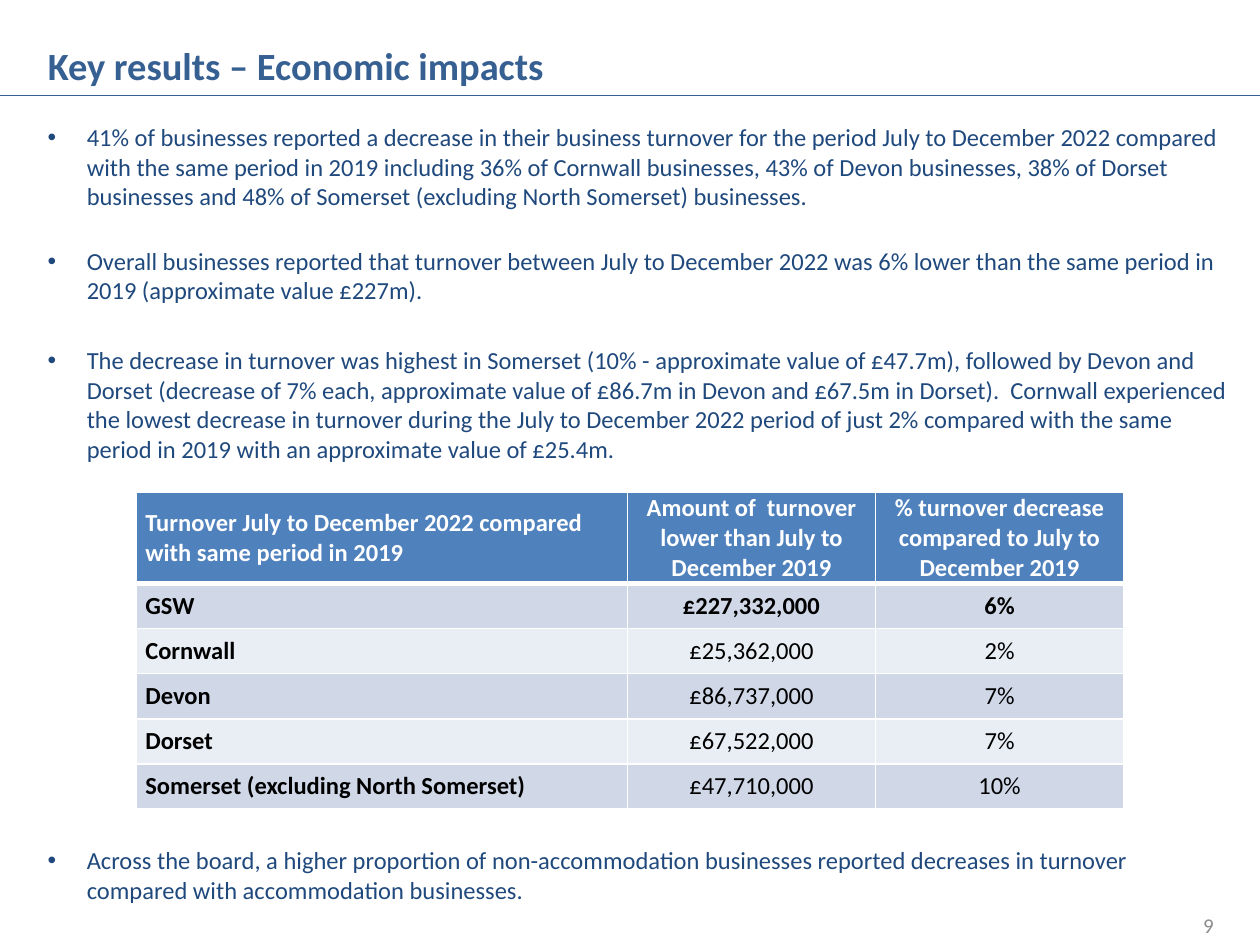
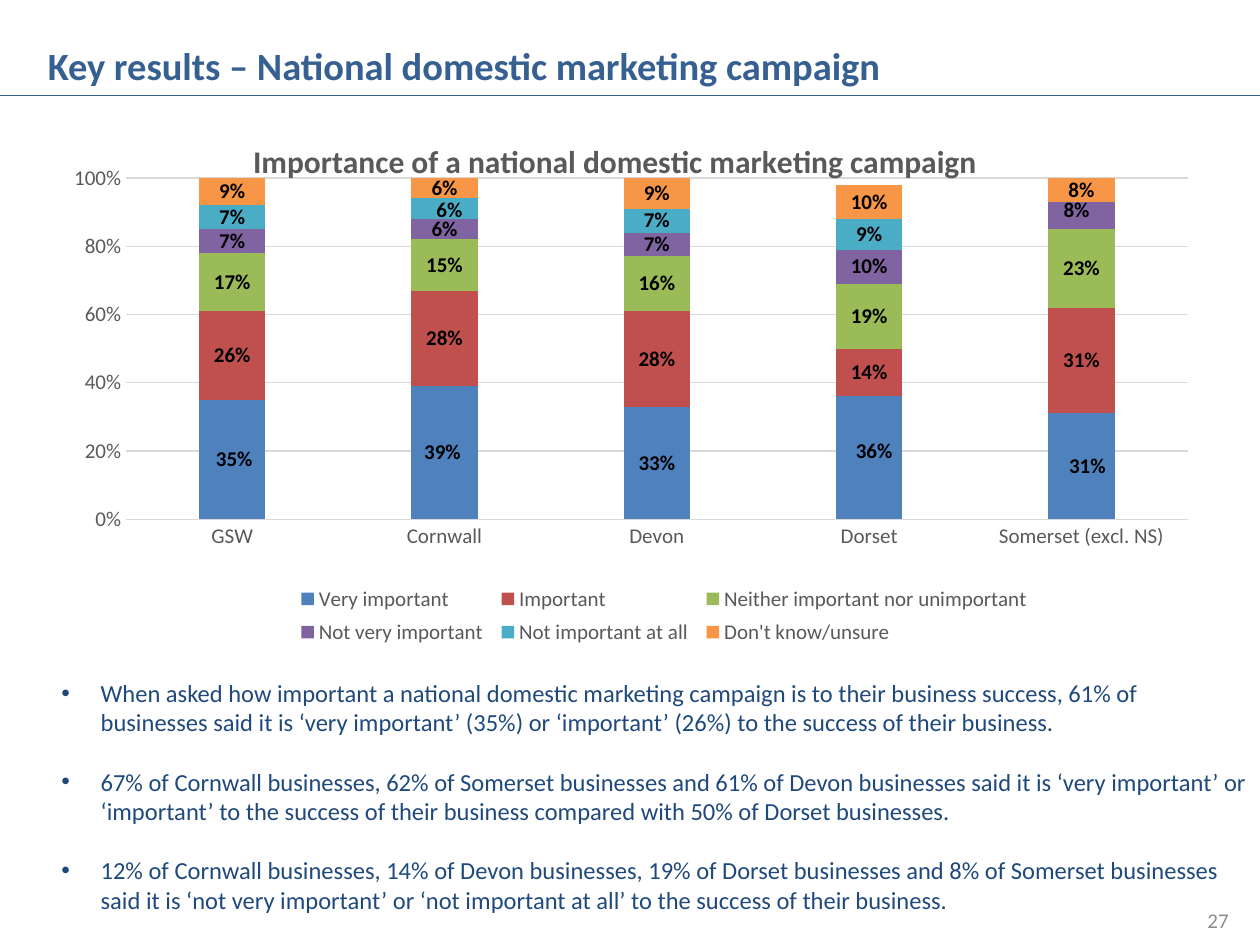
"""Build two slides of key tourism business results: a turnover table and a campaign chart."""

from lxml.etree import SubElement
from pptx import Presentation
from pptx.chart.data import CategoryChartData
from pptx.dml.color import RGBColor
from pptx.enum.chart import XL_CHART_TYPE as ChartType, XL_LABEL_POSITION as LabelPosition
from pptx.enum.chart import XL_LEGEND_POSITION as LegendPosition, XL_TICK_MARK as TickMark
from pptx.enum.shapes import MSO_CONNECTOR as Connector
from pptx.enum.text import MSO_ANCHOR as Anchor, MSO_AUTO_SIZE as AutoSize, PP_ALIGN as Align
from pptx.oxml import parse_xml
from pptx.oxml.ns import nsdecls, qn
from pptx.util import Cm, Pt

FONT = "Calibri"
TITLE_BLUE = RGBColor(0x37, 0x60, 0x92)
TEXT_BLUE = RGBColor(0x1F, 0x49, 0x7D)
HEADER_BLUE = RGBColor(0x4F, 0x81, 0xBD)
BAND_DARK = RGBColor(0xD0, 0xD8, 0xE8)
BAND_LIGHT = RGBColor(0xE9, 0xED, 0xF4)
NUMBER_GREY = RGBColor(0x8C, 0x8C, 0x8C)
CHART_GREY = RGBColor(0x59, 0x59, 0x59)
GRID_GREY = RGBColor(0xD9, 0xD9, 0xD9)
BLACK = RGBColor(0, 0, 0)
WHITE = RGBColor(0xFF, 0xFF, 0xFF)
RED = RGBColor(0xC0, 0x50, 0x4D)
GREEN = RGBColor(0x9B, 0xBB, 0x59)
PURPLE = RGBColor(0x80, 0x64, 0xA2)
TEAL = RGBColor(0x4B, 0xAC, 0xC6)
ORANGE = RGBColor(0xF7, 0x96, 0x46)


def write_text(frame, text, size=14, color=TEXT_BLUE, bold=False, align=Align.LEFT,
               line_spacing=None, space_after=0, bullet=False):
    """Append one formatted paragraph, reusing the empty first one."""
    paragraph = frame.paragraphs[0] if not frame.text else frame.add_paragraph()
    paragraph.alignment = align
    paragraph.line_spacing = line_spacing
    paragraph.space_before = Pt(0)
    paragraph.space_after = Pt(space_after)
    run = paragraph.add_run()
    run.text = text
    run.font.name = FONT
    run.font.size = Pt(size)
    run.font.bold = bold
    run.font.color.rgb = color
    if bullet:
        properties = paragraph._p.get_or_add_pPr()
        properties.set("marL", str(Cm(0.79)))
        properties.set("indent", str(-Cm(0.79)))
        SubElement(properties, qn("a:buFont"), typeface="Arial")
        SubElement(properties, qn("a:buChar"), char="•")


def place_part(part, index, inner=False, **fractions):
    """Give a chart part a manual layout as its child at the index."""
    for old_layout in part.findall(qn("c:layout")):
        part.remove(old_layout)
    layout = parse_xml(f"<c:layout {nsdecls('c')}><c:manualLayout/></c:layout>")
    manual = layout[0]
    if inner:
        SubElement(manual, qn("c:layoutTarget"), val="inner")
    if part.tag != qn("c:dLbl"):
        SubElement(manual, qn("c:xMode"), val="edge")
        SubElement(manual, qn("c:yMode"), val="edge")
    for name, value in fractions.items():
        SubElement(manual, qn(f"c:{name}"), val=f"{value:.4f}")
    part.insert(index, layout)


presentation = Presentation()
presentation.slide_width = Cm(25.4)
presentation.slide_height = Cm(19.05)

SLIDES = [
    {
        "title": "Key results – Economic impacts", "title_width": 10.64,
        "number": "9", "number_at": (18.8, 18.14),
        "body_at": (0.71, 2.34, 24.36, 16.71),
        "bullets": [
            ("41% of businesses reported a decrease in their business turnover for the period July to "
             "December 2022 compared with the same period in 2019 including 36% of Cornwall businesses, "
             "43% of Devon businesses, 38% of Dorset businesses and 48% of Somerset (excluding North "
             "Somerset) businesses.", 20.2),
            ("Overall businesses reported that turnover between July to December 2022 was 6% lower than "
             "the same period in 2019 (approximate value £227m).", 23.3),
            ("The decrease in turnover was highest in Somerset (10% - approximate value of £47.7m), "
             "followed by Devon and Dorset (decrease of 7% each, approximate value of £86.7m in Devon "
             "and £67.5m in Dorset).  Cornwall experienced the lowest decrease in turnover during the "
             "July to December 2022 period of just 2% compared with the same period in 2019 with an "
             "approximate value of £25.4m.", 218.5),
            ("Across the board, a higher proportion of non-accommodation businesses reported decreases "
             "in turnover compared with accommodation businesses.", 0),
        ],
    },
    {
        "title": "Key results – National domestic marketing campaign", "title_width": 17.5,
        "number": "27", "number_at": (19.1, 18.03),
        "body_at": (0.99, 13.54, 24.41, 5.05),
        "bullets": [
            ("When asked how important a national domestic marketing campaign is to their business "
             "success, 61% of businesses said it is ‘very important’ (35%) or ‘important’ (26%) to the "
             "success of their business.", 17.1),
            ("67% of Cornwall businesses, 62% of Somerset businesses and 61% of Devon businesses said it "
             "is ‘very important’ or ‘important’ to the success of their business compared with 50% of "
             "Dorset businesses.", 17.1),
            ("12% of Cornwall businesses, 14% of Devon businesses, 19% of Dorset businesses and 8% of "
             "Somerset businesses said it is ‘not very important’ or ‘not important at all’ to the "
             "success of their business.", 0),
        ],
    },
]

for content in SLIDES:
    slide = presentation.slides.add_slide(presentation.slide_layouts[5])
    title = slide.shapes.title
    title.left, title.top = Cm(0.71), Cm(0.53)
    title.width, title.height = Cm(content["title_width"]), Cm(1.4)
    title.text_frame.word_wrap = False
    title.text_frame.auto_size = AutoSize.SHAPE_TO_FIT_TEXT
    title.text_frame.vertical_anchor = Anchor.TOP
    write_text(title.text_frame, content["title"], size=22, color=TITLE_BLUE, bold=True,
               line_spacing=1.2)

    rule = slide.shapes.add_connector(Connector.STRAIGHT, 0, Cm(1.93), Cm(25.4), Cm(1.93))
    rule.line.color.rgb = TITLE_BLUE
    rule.line.width = Pt(0.75)
    SubElement(rule.element.spPr, qn("a:effectLst"))

    body = slide.shapes.add_textbox(*[Cm(length) for length in content["body_at"]])
    body.text_frame.word_wrap = True
    for text, gap in content["bullets"]:
        write_text(body.text_frame, text, space_after=gap, bullet=True)

    left, top = content["number_at"]
    number = slide.shapes.add_textbox(Cm(left), Cm(top), Cm(5.92), Cm(1.02))
    number.text_frame.word_wrap = True
    number.text_frame.vertical_anchor = Anchor.MIDDLE
    write_text(number.text_frame, content["number"], size=12, color=NUMBER_GREY, align=Align.RIGHT)

TURNOVER = [
    ("Turnover July to December 2022 compared with same period in 2019",
     "Amount of  turnover lower than July to December 2019",
     "% turnover decrease compared to July to December 2019"),
    ("GSW", "£227,332,000", "6%"),
    ("Cornwall", "£25,362,000", "2%"),
    ("Devon", "£86,737,000", "7%"),
    ("Dorset", "£67,522,000", "7%"),
    ("Somerset (excluding North Somerset)", "£47,710,000", "10%"),
]
table = presentation.slides[0].shapes.add_table(
    len(TURNOVER), 3, Cm(2.75), Cm(9.93), Cm(19.9), Cm(6.38)).table
for column, width in zip(table.columns, (9.9, 5, 5)):
    column.width = Cm(width)
for row_index, values in enumerate(TURNOVER):
    is_header = row_index == 0
    table.rows[row_index].height = Cm(1.83 if is_header else 0.91)
    band = HEADER_BLUE if is_header else BAND_DARK if row_index % 2 else BAND_LIGHT
    for column_index, value in enumerate(values):
        cell = table.cell(row_index, column_index)
        cell.margin_left = cell.margin_right = Cm(0.18)
        cell.margin_top = cell.margin_bottom = 0
        cell.vertical_anchor = Anchor.MIDDLE
        cell.fill.solid()
        cell.fill.fore_color.rgb = band
        write_text(cell.text_frame, value, color=WHITE if is_header else BLACK,
                   bold=row_index < 2 or column_index == 0,
                   align=Align.CENTER if column_index else Align.LEFT)
        for position, side in enumerate("LRTB"):
            thick = (is_header and side == "B") or (row_index == 1 and side == "T")
            border = parse_xml(
                f'<a:ln{side} {nsdecls("a")} w="{Pt(3 if thick else 1)}"><a:solidFill>'
                f'<a:srgbClr val="{WHITE}"/></a:solidFill></a:ln{side}>')
            cell._tc.get_or_add_tcPr().insert(position, border)

ANSWERS = [
    ("Very important", HEADER_BLUE, (0.35, 0.39, 0.33, 0.36, 0.31)),
    ("Important", RED, (0.26, 0.28, 0.28, 0.14, 0.31)),
    ("Neither important nor unimportant", GREEN, (0.17, 0.15, 0.16, 0.19, 0.23)),
    ("Not very important", PURPLE, (0.07, 0.06, 0.07, 0.1, 0.08)),
    ("Not important at all", TEAL, (0.07, 0.06, 0.07, 0.09, None)),
    ("Don't know/unsure", ORANGE, (0.09, 0.06, 0.09, 0.1, 0.08)),
]
LABEL_SHIFTS = {
    (0, 0): (0.04, 0), (0, 1): (-0.04, 0), (0, 3): (0.1, -0.14), (0, 4): (0.12, 0),
    (3, 4): (-0.1, -0.1), (4, 1): (0.1, 0.04),
}
CHART_WIDTH, CHART_HEIGHT = 23.6, 11.07

chart_data = CategoryChartData(number_format="0%")
chart_data.categories = ["GSW", "Cornwall", "Devon", "Dorset", "Somerset (excl. NS)"]
for name, _, values in ANSWERS:
    chart_data.add_series(name, values)
chart = presentation.slides[1].shapes.add_chart(
    ChartType.COLUMN_STACKED, Cm(0.74), Cm(2.26), Cm(CHART_WIDTH), Cm(CHART_HEIGHT), chart_data).chart
chart.font.name = FONT
chart.font.size = Pt(12)
chart.font.color.rgb = CHART_GREY

write_text(chart.chart_title.text_frame, "Importance of a national domestic marketing campaign",
           size=18, color=CHART_GREY, bold=True, align=Align.CENTER)
chart.has_legend = True
chart.legend.position = LegendPosition.BOTTOM
chart.legend.include_in_layout = False
chart.legend.font.name = FONT
chart.legend.font.size = Pt(12)
chart.legend.font.color.rgb = CHART_GREY

for axis in (chart.category_axis, chart.value_axis):
    axis.major_tick_mark = axis.minor_tick_mark = TickMark.NONE
    axis.tick_labels.font.name = FONT
    axis.tick_labels.font.size = Pt(12)
    axis.tick_labels.font.color.rgb = CHART_GREY
chart.value_axis.format.line.fill.background()
chart.value_axis.minimum_scale = 0
chart.value_axis.maximum_scale = 1
chart.value_axis.major_unit = 0.2
chart.value_axis.tick_labels.number_format = "0%"
chart.value_axis.tick_labels.number_format_is_linked = False
for line in (chart.category_axis.format.line, chart.value_axis.major_gridlines.format.line):
    line.color.rgb = GRID_GREY
    line.width = Pt(0.75)

plot = chart.plots[0]
plot.gap_width = 219
plot.overlap = 100
plot.vary_by_categories = False
for series_index, (series, answer) in enumerate(zip(plot.series, ANSWERS)):
    series.format.fill.solid()
    series.format.fill.fore_color.rgb = answer[1]
    labels = series.data_labels
    labels.show_value = True
    labels.number_format = "0%"
    labels.number_format_is_linked = False
    shifts = {point: shift for (owner, point), shift in LABEL_SHIFTS.items() if owner == series_index}
    point_labels = [series.points[point].data_label for point in shifts]
    for label in [labels, *point_labels]:
        label.position = LabelPosition.CENTER
        label.font.name = FONT
        label.font.size = Pt(12)
        label.font.bold = True
        label.font.color.rgb = BLACK
    for element, (x, y) in zip(series._element.xpath("c:dLbls/c:dLbl"), shifts.values()):
        place_part(element, 1, x=x / CHART_WIDTH, y=y / CHART_HEIGHT)

chart_element = chart.element.find(qn("c:chart"))
place_part(chart_element.find(qn("c:title")), 1, x=0.18, y=0.04)
place_part(chart_element.find(qn("c:plotArea")), 0, inner=True, x=1.8 / CHART_WIDTH,
           y=1.33 / CHART_HEIGHT, w=21.4 / CHART_WIDTH, h=6.88 / CHART_HEIGHT)
place_part(chart_element.find(qn("c:legend")), 1, x=5.1 / CHART_WIDTH, y=9.4 / CHART_HEIGHT,
           w=15.1 / CHART_WIDTH, h=1.5 / CHART_HEIGHT)

presentation.save("out.pptx")
